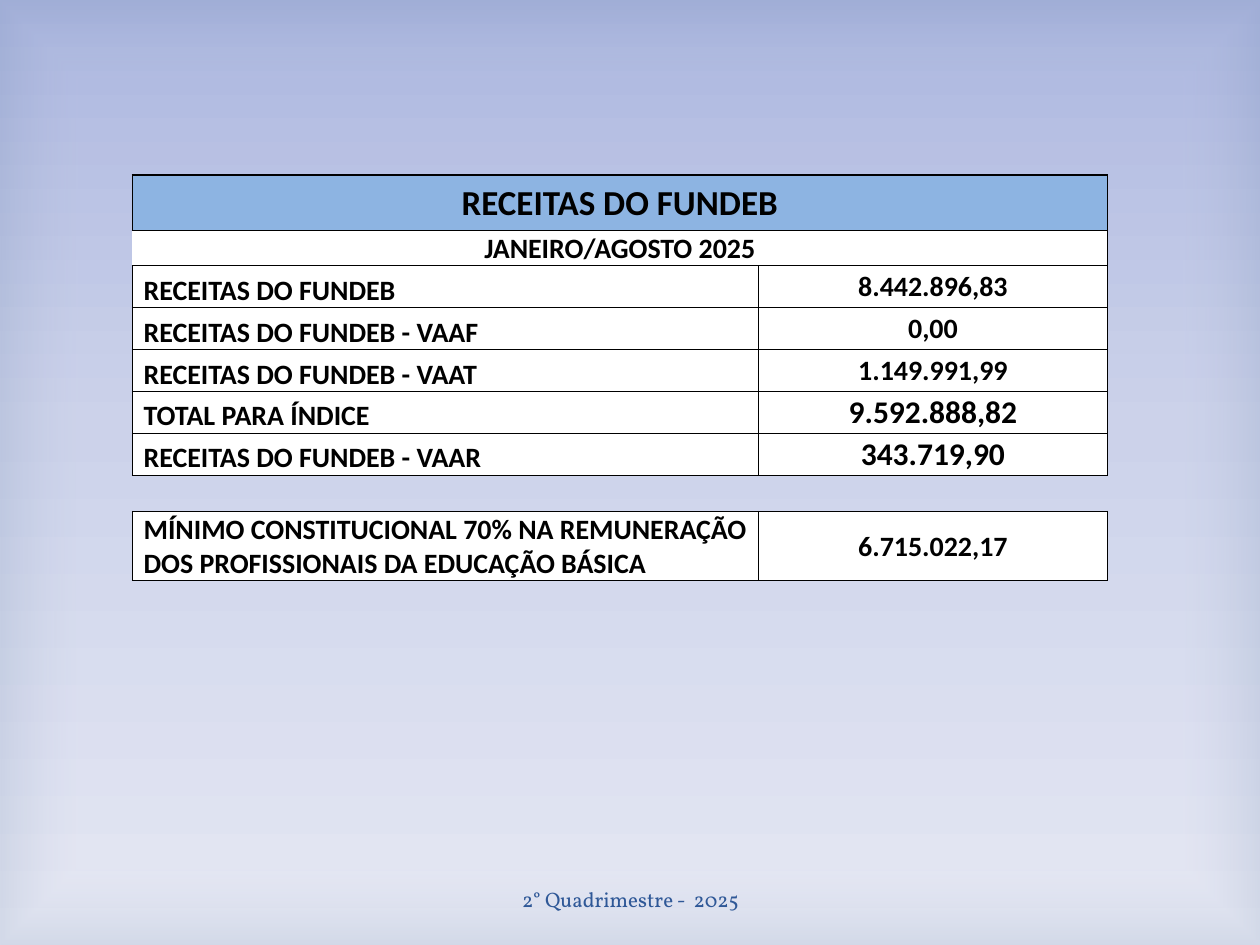
"""Build the FUNDEB revenue slide with its table and footer."""
from lxml.etree import SubElement
from pptx import Presentation
from pptx.dml.color import RGBColor
from pptx.enum.shapes import MSO_SHAPE
from pptx.enum.text import MSO_ANCHOR as ANCHOR, PP_ALIGN as ALIGN
from pptx.oxml.ns import qn
from pptx.util import Inches, Pt

COLORS = {
    "black": "000000", "white": "FFFFFF", "header": "8DB4E2", "footer": "2F5897",
    "sky": "A2AEDC", "mist": "C6CDE8", "pale": "E3E6F3", "edge": "9BADC4",
}
GRID_COLUMNS, GRID_ROWS = 100, 75
SIDES = "LRTB"
REVENUES = [
    ("RECEITAS DO FUNDEB", "8.442.896,83", 16),
    ("RECEITAS DO FUNDEB - VAAF", "0,00", 16),
    ("RECEITAS DO FUNDEB - VAAT", "1.149.991,99", 16),
    ("TOTAL PARA ÍNDICE", "9.592.888,82", 18),
    ("RECEITAS DO FUNDEB - VAAR", "343.719,90", 18),
]
MINIMUM = ("MÍNIMO CONSTITUCIONAL 70% NA REMUNERAÇÃO "
           "DOS PROFISSIONAIS DA EDUCAÇÃO BÁSICA")


def write_text(frame, text, size=16, font="Calibri", color="black", bold=True, align=ALIGN.CENTER):
    paragraph = frame.paragraphs[0]
    paragraph.alignment = align
    run = paragraph.add_run()
    run.text = text
    run.font.size, run.font.name, run.font.bold = Pt(size), font, bold
    run.font.color.rgb = RGBColor.from_string(COLORS[color])


def set_gradient(fill, element, stops, linear=True):
    fill.gradient()
    gradient = element.find(".//" + qn("a:gradFill"))
    for child in list(gradient):
        gradient.remove(child)
    stop_list = SubElement(gradient, qn("a:gsLst"))
    for position, color, opacity in stops:
        stop = SubElement(stop_list, qn("a:gs"), pos=str(position * 1000))
        tint = SubElement(stop, qn("a:srgbClr"), val=COLORS[color])
        if opacity < 100:
            SubElement(tint, qn("a:alpha"), val=str(opacity * 1000))
    if linear:
        SubElement(gradient, qn("a:lin"), ang="5400000", scaled="0")
    else:
        center = SubElement(gradient, qn("a:path"), path="rect")
        SubElement(center, qn("a:fillToRect"), **dict.fromkeys("ltrb", "50000"))


class SlideBuilder:
    """Hold the slide and its grid, and add each kind of element."""

    def __init__(self, presentation):
        self.column = presentation.slide_width / GRID_COLUMNS
        self.row = presentation.slide_height / GRID_ROWS
        self.slide = presentation.slides.add_slide(presentation.slide_layouts[6])

    def place(self, left, top, width, height):
        return (int(left * self.column), int(top * self.row),
                int(width * self.column), int(height * self.row))

    def background(self, stops):
        set_gradient(self.slide.background.fill, self.slide.element, stops)

    def vignette(self, stops):
        box = self.place(0, 0, GRID_COLUMNS, GRID_ROWS)
        shape = self.slide.shapes.add_shape(MSO_SHAPE.RECTANGLE, *box)
        shape.shadow.inherit = False
        shape.line.fill.background()
        set_gradient(shape.fill, shape.element, stops, linear=False)

    def text(self, text, box, **style):
        frame = self.slide.shapes.add_textbox(*self.place(*box)).text_frame
        frame.word_wrap = True
        frame.vertical_anchor = ANCHOR.MIDDLE
        write_text(frame, text, **style)

    def table(self, left, top, columns, rows):
        box = self.place(left, top, sum(columns), sum(rows))
        table = self.slide.shapes.add_table(len(rows), len(columns), *box).table
        table.first_row = table.horz_banding = False
        for column, width in zip(table.columns, columns):
            column.width = int(width * self.column)
        for row, height in zip(table.rows, rows):
            row.height = int(height * self.row)
        return table

    def cell(self, cell, text="", fill=None, borders=None, anchor=ANCHOR.MIDDLE, indent=0.01, **style):
        borders = dict.fromkeys(SIDES, 0.5) if borders is None else borders
        properties = cell._tc.get_or_add_tcPr()
        for side in SIDES:
            line = SubElement(properties, qn("a:ln" + side), w=str(Pt(borders.get(side, 0.5))))
            if side in borders:
                solid = SubElement(line, qn("a:solidFill"))
                SubElement(solid, qn("a:srgbClr"), val=COLORS["black"])
            else:
                SubElement(line, qn("a:noFill"))
        if fill:
            cell.fill.solid()
            cell.fill.fore_color.rgb = RGBColor.from_string(COLORS[fill])
        else:
            cell.fill.background()
        cell.margin_left, cell.margin_right = Inches(indent), Inches(0.01)
        cell.margin_top, cell.margin_bottom = Inches(0.01), 0
        cell.vertical_anchor = anchor
        if text:
            write_text(cell.text_frame, text, **style)
        else:
            SubElement(cell.text_frame.paragraphs[0]._p, qn("a:endParaRPr"), sz="1600")

    def banner(self, table, row, text, **style):
        first, last = table.cell(row, 0), table.cell(row, 1)
        first.merge(last)
        self.cell(first, text, **style)
        self.cell(last, fill=style["fill"], borders=style["borders"])

    def entry(self, table, row, label, value, size=16, anchor=ANCHOR.BOTTOM):
        self.cell(table.cell(row, 0), label, fill="white", anchor=anchor, indent=0.09, align=ALIGN.LEFT)
        self.cell(table.cell(row, 1), value, fill="white", size=size)


def main():
    presentation = Presentation()
    presentation.slide_width, presentation.slide_height = Inches(10), Inches(7.5)
    builder = SlideBuilder(presentation)
    builder.background([(0, "sky", 100), (45, "mist", 100), (100, "pale", 100)])
    builder.vignette([(83, "white", 11), (100, "edge", 23)])
    builder.text("2° Quadrimestre -  2025", (34.2, 69.4, 31.7, 4),
                 size=12, font="Vollkorn", color="footer", bold=False)

    heights = [4.4, 2.8] + [3.33] * len(REVENUES) + [2.85, 5.5]
    table = builder.table(10.5, 13.9, [49.7, 27.7], heights)
    builder.banner(table, 0, "RECEITAS DO FUNDEB", fill="header", size=20,
                   borders=dict.fromkeys(SIDES, 1))
    builder.banner(table, 1, "JANEIRO/AGOSTO 2025", fill="white",
                   borders={"T": 1, "R": 0.5, "B": 0.5})
    for row, (label, value, size) in enumerate(REVENUES, start=2):
        builder.entry(table, row, label, value, size)
    spacer = len(heights) - 2
    for column in range(2):
        builder.cell(table.cell(spacer, column), borders={"T": 0.5, "B": 0.5})
    builder.entry(table, spacer + 1, MINIMUM, "6.715.022,17", anchor=ANCHOR.MIDDLE)
    presentation.save("out.pptx")


if __name__ == "__main__":
    main()
